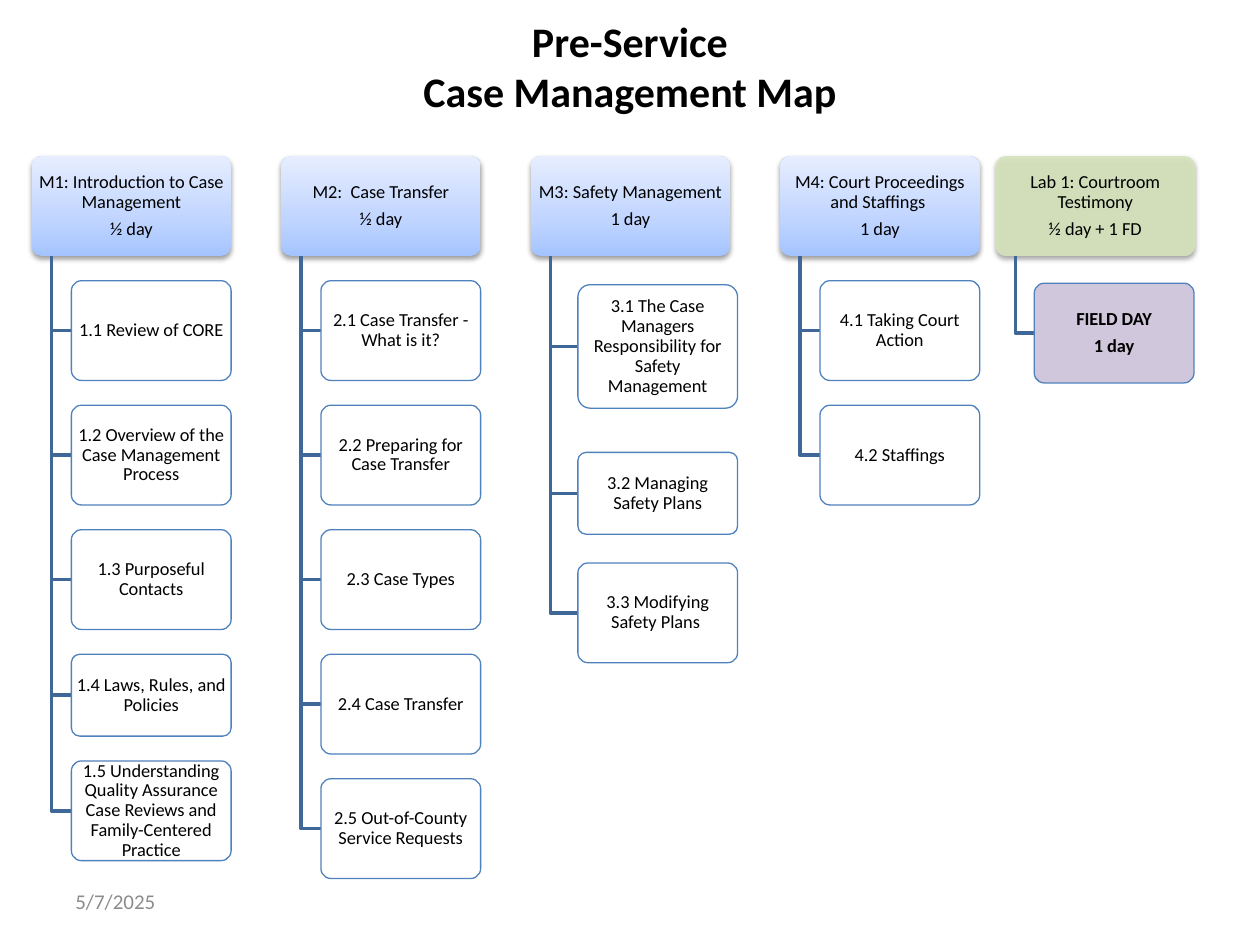
"""Build the Pre-Service case management map slide."""
import copy

import lxml.etree
import pptx
import pptx.dml.color
import pptx.enum.shapes
import pptx.enum.text
import pptx.oxml.ns
import pptx.util

Cm, Pt = pptx.util.Cm, pptx.util.Pt
RGB = pptx.dml.color.RGBColor
ALIGN = pptx.enum.text.PP_ALIGN
qn = pptx.oxml.ns.qn

BLACK = RGB(0x00, 0x00, 0x00)
WHITE = RGB(0xFF, 0xFF, 0xFF)
GRAY = RGB(0x8C, 0x8C, 0x8C)
GREEN = RGB(0xD7, 0xE4, 0xBD)
PURPLE = RGB(0xCC, 0xC1, 0xDA)
OUTLINE = RGB(0x4F, 0x81, 0xBD)
BRANCH = RGB(0x3F, 0x67, 0x97)
MODULE_BLUES = [
    (0, RGB(0xA4, 0xC4, 0xFF)),
    (0.35, RGB(0xBF, 0xD4, 0xFF)),
    (1, RGB(0xE6, 0xEE, 0xFF)),
]

TITLE = "Pre-Service\vCase Management Map"
DATE = "5/7/2025"
FULL, SHORT, TALL, GAP = 2.01, 1.65, 2.49, 0.5
MODULES = [
    {"heading": ["M1: Introduction to Case Management", "½ day"],
     "units": [("1.1 Review of CORE", FULL, GAP),
               ("1.2 Overview of the Case Management Process", FULL, GAP),
               ("1.3 Purposeful Contacts", FULL, GAP),
               ("1.4 Laws, Rules, and Policies", SHORT, GAP),
               ("1.5 Understanding Quality Assurance Case Reviews and "
                "Family-Centered Practice", FULL, GAP)]},
    {"heading": ["M2:  Case Transfer", "½ day"],
     "units": [("2.1 Case Transfer - What is it?", FULL, GAP),
               ("2.2 Preparing for Case Transfer", FULL, GAP),
               ("2.3 Case Types", FULL, GAP),
               ("2.4 Case Transfer", FULL, GAP),
               ("2.5 Out-of-County Service Requests", FULL, GAP)]},
    {"heading": ["M3: Safety Management", "1 day"], "indent": 0.95,
     "units": [("3.1 The Case Managers Responsibility for Safety Management",
                TALL, 0.58),
               ("3.2 Managing Safety Plans", SHORT, 0.89),
               ("3.3 Modifying Safety Plans ", FULL, 0.58)]},
    {"heading": ["M4: Court Proceedings and Staffings ", "1 day"],
     "units": [("4.1 Taking Court Action", FULL, GAP),
               ("4.2 Staffings", FULL, GAP)]},
    {"heading": ["Lab 1: Courtroom Testimony", "½ day + 1 FD"],
     "left": 20.07, "indent": 0.78, "heading_fill": GREEN,
     "unit_fill": PURPLE, "unit_bold": True,
     "units": [("FIELD DAY\n1 day", FULL, 0.55)]},
]

FIRST_LEFT, PITCH, TOP = 0.64, 5.03, 3.15
HEADING_WIDTH, UNIT_WIDTH = 4.02, 3.22
TRUNK_OFFSET, INDENT, INSET = 0.4, 0.8, 0.05

BOX_FRAME = {
    "word_wrap": True,
    "vertical_anchor": pptx.enum.text.MSO_ANCHOR.MIDDLE,
    "margin_left": Cm(INSET), "margin_right": Cm(INSET),
    "margin_top": Cm(INSET), "margin_bottom": Cm(INSET),
}
LABEL_FRAME = {key: BOX_FRAME[key] for key in ("word_wrap", "vertical_anchor")}
BOX_PARAGRAPH = {"alignment": ALIGN.CENTER, "line_spacing": 0.9,
                 "space_after": Pt(3.68)}


def assign(target, values):
    for name, value in values.items():
        setattr(target, name, value)


def write(shape, lines, size, color, bold, frame, paragraph):
    text = shape.text_frame
    text.text = "\n".join(lines)
    assign(text, frame)
    for line in text.paragraphs:
        assign(line, paragraph)
        for run in line.runs:
            assign(run.font, {"name": "Calibri", "size": Pt(size), "bold": bold})
            run.font.color.rgb = color


def add_label(slide, bounds, text, size, color, bold, alignment):
    label = slide.shapes.add_textbox(*map(Cm, bounds))
    write(label, [text], size, color, bold, LABEL_FRAME, {"alignment": alignment})


def set_opacity(color, percent):
    lxml.etree.SubElement(color, qn("a:alpha"), val=str(percent * 1000))


def fill_solid(box, color):
    box.fill.solid()
    box.fill.fore_color.rgb = color
    set_opacity(box.fill._xPr.find(".//" + qn("a:srgbClr")), 90)


def fill_gradient(box):
    box.fill.gradient()
    box.fill.gradient_angle = 90
    stops = box._element.spPr.find(".//" + qn("a:gsLst"))
    stops.append(copy.deepcopy(stops[-1]))
    for stop, (position, color) in zip(box.fill.gradient_stops, MODULE_BLUES):
        stop.position = position
        stop.color.rgb = color


def add_shadow(box):
    effects = box._element.spPr.find(qn("a:effectLst"))
    shadow = lxml.etree.SubElement(
        effects, qn("a:outerShdw"), blurRad=str(Pt(3.1)), dist=str(Pt(1.6)),
        dir="5400000", rotWithShape="0")
    color = lxml.etree.SubElement(shadow, qn("a:srgbClr"), val=str(BLACK))
    set_opacity(color, 38)


def add_box(slide, bounds, lines, fill=None, bold=False):
    box = slide.shapes.add_shape(
        pptx.enum.shapes.MSO_SHAPE.ROUNDED_RECTANGLE, *map(Cm, bounds))
    box.adjustments[0] = 0.1
    box.shadow.inherit = False
    if fill is None:
        fill_gradient(box)
    else:
        fill_solid(box, fill)
    write(box, lines, 10.5, BLACK, bold, BOX_FRAME, BOX_PARAGRAPH)
    return box


def add_branch(slide, trunk, top, middle, end):
    builder = slide.shapes.build_freeform(Cm(trunk), Cm(top))
    builder.add_line_segments(
        [(Cm(trunk), Cm(middle)), (Cm(end), Cm(middle))], close=False)
    branch = builder.convert_to_shape()
    branch.shadow.inherit = False
    branch.fill.background()
    branch.line.color.rgb = BRANCH
    branch.line.width = Pt(2)


def add_module(slide, index, module):
    left = module.get("left", FIRST_LEFT + index * PITCH)
    heading = add_box(slide, (left, TOP, HEADING_WIDTH, FULL),
                      module["heading"], module.get("heading_fill"))
    heading.line.fill.background()
    add_shadow(heading)
    unit_left = left + module.get("indent", INDENT)
    bottom = TOP + FULL
    for text, height, gap in module["units"]:
        top = bottom + gap
        add_branch(slide, left + TRUNK_OFFSET, TOP + FULL,
                   top + height / 2, unit_left)
        unit = add_box(slide, (unit_left, top, UNIT_WIDTH, height),
                       text.split("\n"), module.get("unit_fill", WHITE),
                       module.get("unit_bold", False))
        unit.line.color.rgb = OUTLINE
        unit.line.width = Pt(0.75)
        bottom = top + height


def main():
    deck = pptx.Presentation()
    assign(deck, {"slide_width": Cm(25.4), "slide_height": Cm(19.05)})
    slide = deck.slides.add_slide(deck.slide_layouts[6])
    add_label(slide, (1.27, 0.76, 22.86, 1.14), TITLE, 24, BLACK, True,
              ALIGN.CENTER)
    for index, module in enumerate(MODULES):
        add_module(slide, index, module)
    add_label(slide, (1.27, 17.65, 5.92, 1.02), DATE, 12, GRAY, False,
              ALIGN.LEFT)
    deck.save("out.pptx")


if __name__ == "__main__":
    main()
